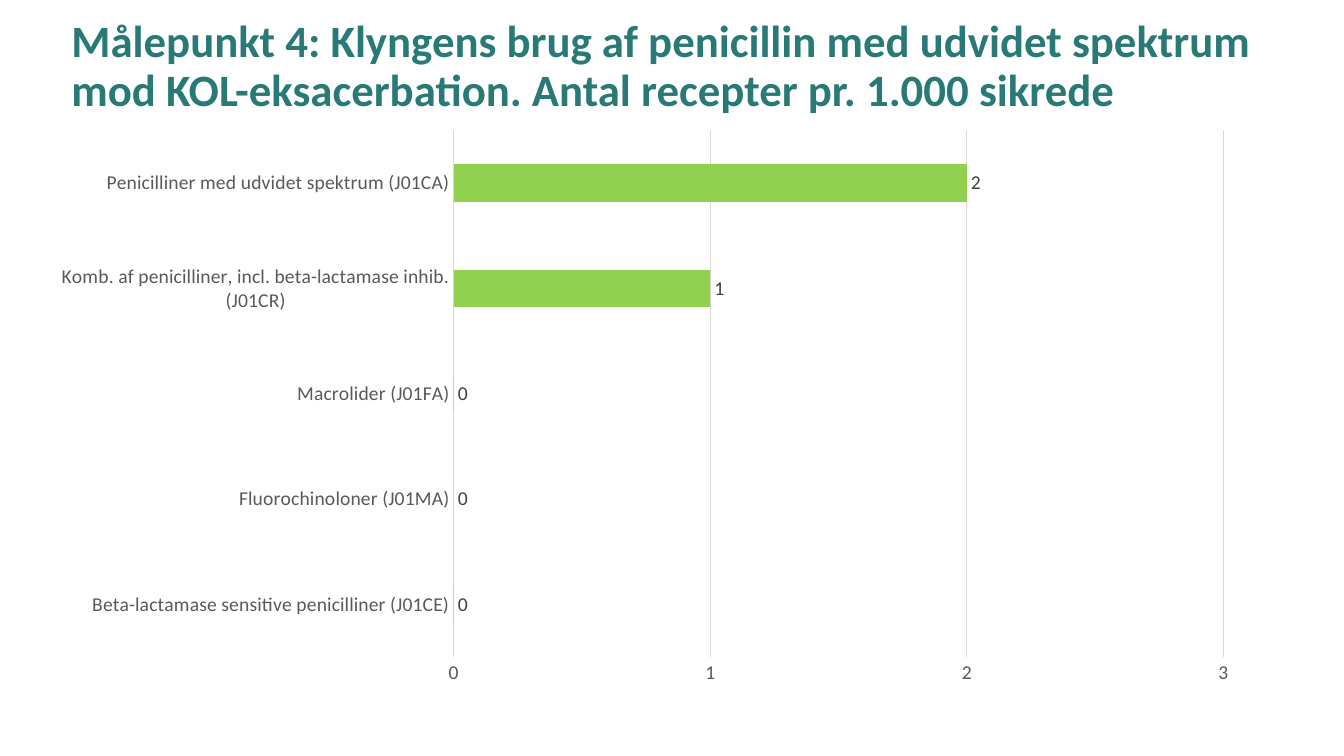
from lxml import etree
from pptx import Presentation
from pptx import util as u
from pptx.chart.data import CategoryChartData
from pptx.dml.color import RGBColor
from pptx.enum import chart as ch, text
from pptx.oxml import parse_xml
from pptx.oxml.ns import nsdecls

WIDTH, HEIGHT = 13.33, 7.5


def rgb(value):
    return RGBColor.from_string(value)


class Deck:
    """Holds the style and the current slide; lengths are in percent of the slide."""

    FONT = "Calibri"
    COLORS = {"title": "297A77", "axis": "595959", "label": "404040",
              "grid": "D9D9D9", "bar": "4472C4", "accent": "92D050"}

    def __init__(self):
        self.prs = Presentation()
        self.prs.slide_width, self.prs.slide_height = u.Inches(WIDTH), u.Inches(HEIGHT)
        self.s = self.prs.slides.add_slide(self.prs.slide_layouts[6])

    def place(self, x, y, w, h):
        sides = (WIDTH, HEIGHT, WIDTH, HEIGHT)
        return [u.Inches(share * side / 100) for share, side in zip((x, y, w, h), sides)]

    def font(self, font, size, color, bold=False):
        for name, value in {"name": self.FONT, "size": u.Pt(size), "bold": bold}.items():
            setattr(font, name, value)
        font.color.rgb = rgb(self.COLORS[color])

    def line(self, fmt):
        fmt.line.color.rgb = rgb(self.COLORS["grid"])
        fmt.line.width = u.Pt(0.75)

    def title(self, box, wording):
        tf = self.s.shapes.add_textbox(*self.place(*box)).text_frame
        frame = {"word_wrap": True, "vertical_anchor": text.MSO_ANCHOR.MIDDLE}
        for name, value in frame.items():
            setattr(tf, name, value)
        p = tf.paragraphs[0]
        p.line_spacing = 0.9
        r = p.add_run()
        r.text = wording
        self.font(r.font, 32, "title", bold=True)

    def bar_chart(self, box, bars, accents, plot_area):
        data = CategoryChartData(number_format="#,##0")
        data.categories = [name for name, _ in bars]
        data.add_series("Series 1", [value for _, value in bars])
        chart = self.s.shapes.add_chart(
            ch.XL_CHART_TYPE.BAR_CLUSTERED, *self.place(*box), data).chart
        chart.has_legend = chart.has_title = False
        self.font(chart.font, 14, "axis")

        # Bars
        plot = chart.plots[0]
        plot.gap_width, plot.vary_by_categories = 182, False
        series = plot.series[0]
        series.invert_if_negative = False
        fills = [(series, "bar")] + [(series.points[i], "accent") for i in accents]
        for part, color in fills:
            part.format.fill.solid()
            part.format.fill.fore_color.rgb = rgb(self.COLORS[color])

        # Value labels
        labels = series.data_labels
        for name, value in {"show_value": True, "number_format": "#,##0",
                            "number_format_is_linked": False,
                            "position": ch.XL_LABEL_POSITION.OUTSIDE_END}.items():
            setattr(labels, name, value)
        self.font(labels.font, 14, "label")

        # Axes
        for axis in (chart.category_axis, chart.value_axis):
            axis.major_tick_mark = axis.minor_tick_mark = ch.XL_TICK_MARK.NONE
            self.font(axis.tick_labels.font, 14, "axis")
        self.line(chart.category_axis.format)
        chart.category_axis.has_major_gridlines = False
        scale = {"minimum_scale": 0, "maximum_scale": 3, "major_unit": 1,
                 "has_major_gridlines": True}
        for name, value in scale.items():
            setattr(chart.value_axis, name, value)
        self.line(chart.value_axis.major_gridlines.format)
        chart.value_axis.format.line.fill.background()
        ticks = chart.value_axis.tick_labels
        ticks.number_format, ticks.number_format_is_linked = "#,##0", False
        self.plot_layout(chart, plot_area)

    def plot_layout(self, chart, plot_area):
        area = chart.plots[0]._element.getparent()
        for old in area.findall("{*}layout"):
            area.remove(old)
        layout = parse_xml(f"<c:layout {nsdecls('c')}><c:manualLayout/></c:layout>")
        values = {"layoutTarget": "inner", "xMode": "edge", "yMode": "edge", **plot_area}
        for name, value in values.items():
            tag = etree.QName(layout).namespace
            etree.SubElement(layout[0], f"{{{tag}}}{name}").set("val", str(value))
        area.insert(0, layout)


def main():
    deck = Deck()

    # Heading
    deck.title((4.58, 3.6, 90.85, 10.67),
               "Målepunkt 4: Klyngens brug af penicillin med udvidet spektrum "
               "mod KOL-eksacerbation. Antal recepter pr. 1.000 sikrede")

    # Prescriptions per 1,000, from the bottom bar up
    bars = [("Beta-lactamase sensitive penicilliner (J01CE)", 0),
            ("Fluorochinoloner (J01MA)", 0),
            ("Macrolider (J01FA)", 0),
            ("Komb. af penicilliner, incl. beta-lactamase inhib. (J01CR)", 1),
            ("Penicilliner med udvidet spektrum (J01CA)", 2)]
    deck.bar_chart((4.58, 15.73, 88.22, 76.53), bars, accents=(1, 3, 4),
                   plot_area={"x": 0.33, "y": 0.02, "w": 0.65, "h": 0.91})

    deck.prs.save("out.pptx")


if __name__ == "__main__":
    main()
